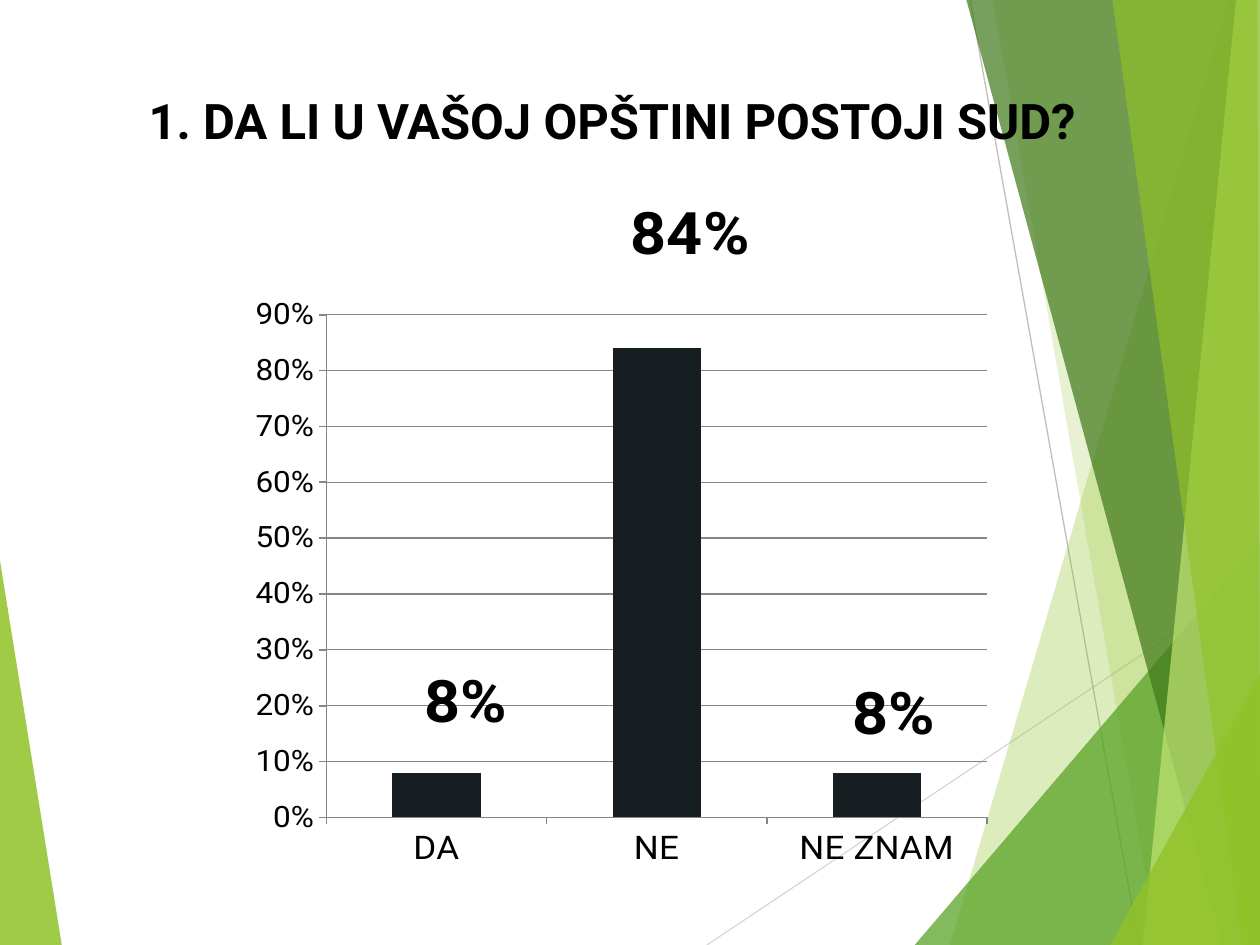
from dataclasses import dataclass

from lxml.etree import SubElement
from pptx import Presentation
from pptx.chart.data import CategoryChartData
from pptx.dml.color import RGBColor
from pptx.enum.chart import XL_CHART_TYPE as ChartType, XL_LABEL_POSITION as LabelPos
from pptx.enum.chart import XL_TICK_MARK as Tick
from pptx.enum.shapes import MSO_CONNECTOR as Connector
from pptx.enum.text import MSO_ANCHOR as Anchor, PP_ALIGN as Align
from pptx.oxml import parse_xml
from pptx.oxml.ns import nsdecls, qn
from pptx.util import Inches, Pt


@dataclass(frozen=True)
class Theme:
    font: str = "Roboto"
    text: str = "000000"
    bar: str = "161E22"
    grid: str = "868686"
    lime: str = "90C226"
    green: str = "54A021"
    forest: str = "3F7819"
    pale: str = "C0E474"
    title_size: int = 28
    label_size: int = 36
    category_size: int = 20
    value_size: int = 18


THEME = Theme()
W, H = 10, 7.5

# Content
QUESTION = "1. DA LI U VAŠOJ OPŠTINI POSTOJI SUD?"
# answer, share, label shift from the bar top (share of chart width, height)
ANSWERS = [
    ("DA", 0.08, (0.035, -0.05)),
    ("NE", 0.84, (0.04, -0.12)),
    ("NE ZNAM", 0.08, (0.02, -0.03)),
]
TITLE_BOX = (1.08, 0.67, 8.5, 0.57)
CHART_BOX = (1.75, 1.58, 6.67, 5.33)
PLOT_AREA = {"x": 0.126, "y": 0.11, "w": 0.786, "h": 0.805}

# Background facets: colour, opacity %, corners
LEFT_FACET = (THEME.lime, 85, [(0, 4.45), (0.49, H), (0, H)])
RAYS = [("D9D9D9", (5.61, H), (W, 4.57)), ("BFBFBF", (7.7, 0), (9.04, H))]
RIGHT_FACETS = [
    (THEME.lime, 30, [(9.75, 0), (7.54, H), (W, H), (W, 0)]),
    (THEME.lime, 20, [(7.88, 0), (9.19, H), (W, H), (W, 0)]),
    (THEME.green, 72, [(7.26, H), (W, 4.29), (W, H)]),
    (THEME.forest, 70, [(7.67, 0), (9.7, H), (W, H), (W, 0)]),
    (THEME.pale, 70, [(9.81, 0), (9.07, H), (W, H), (W, 0)]),
    (THEME.lime, 65, [(8.83, 0), (9.86, H), (W, H), (9.98, 0)]),
    (THEME.lime, 80, [(8.81, H), (W, 5.35), (W, H)]),
]
LEADER_EXT = (
    f'<c:extLst {nsdecls("c")}><c:ext uri="{{CE6537A1-D6FC-4f65-9D91-7224C49458BB}}" '
    'xmlns:c15="http://schemas.microsoft.com/office/drawing/2012/chart">'
    '<c15:showLeaderLines val="0"/></c:ext></c:extLst>')


def rgb(value):
    return RGBColor.from_string(value)


def style_font(font, size, bold=False):
    font.name, font.size, font.bold = THEME.font, Pt(size), bold
    font.color.rgb = rgb(THEME.text)


def add_facet(slide, color, opacity, corners):
    first, *rest = [(Inches(x), Inches(y)) for x, y in corners]
    builder = slide.shapes.build_freeform(*first)
    builder.add_line_segments(rest, close=True)
    facet = builder.convert_to_shape()
    facet.shadow.inherit = False
    facet.fill.solid()
    facet.fill.fore_color.rgb = rgb(color)
    facet.line.fill.background()
    srgb = facet._element.spPr.find(f"{qn('a:solidFill')}/{qn('a:srgbClr')}")
    SubElement(srgb, qn("a:alpha"), val=str(opacity * 1000))


def add_ray(slide, color, start, end):
    ends = [Inches(v) for v in (*start, *end)]
    ray = slide.shapes.add_connector(Connector.STRAIGHT, *ends)
    ray.line.color.rgb = rgb(color)
    ray.line.width = Pt(0.75)
    SubElement(ray._element.spPr, qn("a:effectLst"))


def manual_layout(modes, **shares):
    items = {**modes, **shares}
    inner = "".join(f'<c:{tag} val="{value}"/>' for tag, value in items.items())
    return parse_xml(f"<c:layout {nsdecls('c')}><c:manualLayout>{inner}"
                     "</c:manualLayout></c:layout>")


def add_answer_chart(slide):
    data = CategoryChartData(number_format="0%")
    data.categories = [answer for answer, _, _ in ANSWERS]
    data.add_series("Series 1", [share for _, share, _ in ANSWERS])
    box = [Inches(v) for v in CHART_BOX]
    chart = slide.shapes.add_chart(ChartType.COLUMN_CLUSTERED, *box, data).chart
    chart.has_legend = chart.has_title = False
    style_font(chart.font, THEME.value_size)

    # Plot area
    area = chart._chartSpace.chart.plotArea
    for old in area.findall(qn("c:layout")):
        area.remove(old)
    modes = {"layoutTarget": "inner", "xMode": "edge", "yMode": "edge"}
    area.insert(0, manual_layout(modes, **PLOT_AREA))

    # Axes
    values, categories = chart.value_axis, chart.category_axis
    values.minimum_scale, values.maximum_scale, values.major_unit = 0, 0.9, 0.1
    values.has_major_gridlines = True
    values.tick_labels.number_format = "0%"
    values.tick_labels.number_format_is_linked = False
    for axis, size in ((values, THEME.value_size), (categories, THEME.category_size)):
        axis.major_tick_mark = Tick.OUTSIDE
        style_font(axis.tick_labels.font, size)
    for rule, width in ((values, 1), (categories, 1), (values.major_gridlines, 0.75)):
        rule.format.line.color.rgb = rgb(THEME.grid)
        rule.format.line.width = Pt(width)

    # Bars and their shifted labels, without leader lines
    plot = chart.plots[0]
    plot.gap_width, plot.vary_by_categories = 150, False
    bars = plot.series[0]
    bars.format.fill.solid()
    bars.format.fill.fore_color.rgb = rgb(THEME.bar)
    labels = bars.data_labels
    labels.show_value = True
    labels.number_format, labels.number_format_is_linked = "0%", False
    style_font(labels.font, THEME.label_size, bold=True)
    for index, (_, _, (dx, dy)) in enumerate(ANSWERS):
        label = bars.points[index].data_label
        style_font(label.font, THEME.label_size, bold=True)
        label.position = LabelPos.OUTSIDE_END
        node = labels._element.findall(qn("c:dLbl"))[index]
        node.insert(1, manual_layout({}, x=dx, y=dy))
    for leader in labels._element.findall(qn("c:showLeaderLines")):
        leader.set("val", "0")
    labels._element.append(parse_xml(LEADER_EXT))


def place_title(slide):
    title = slide.shapes.title
    slide.shapes._spTree.append(title._element)  # in front of the facets
    title.left, title.top, title.width, title.height = map(Inches, TITLE_BOX)
    frame = title.text_frame
    frame.word_wrap, frame.vertical_anchor = True, Anchor.MIDDLE
    paragraph = frame.paragraphs[0]
    paragraph.alignment = Align.LEFT
    run = paragraph.add_run()
    run.text = QUESTION
    style_font(run.font, THEME.title_size, bold=True)


def main():
    deck = Presentation()
    deck.slide_width, deck.slide_height = Inches(W), Inches(H)
    slide = deck.slides.add_slide(deck.slide_layouts[5])
    add_facet(slide, *LEFT_FACET)
    for ray in RAYS:
        add_ray(slide, *ray)
    for facet in RIGHT_FACETS:
        add_facet(slide, *facet)
    place_title(slide)
    add_answer_chart(slide)
    deck.save("out.pptx")


if __name__ == "__main__":
    main()
